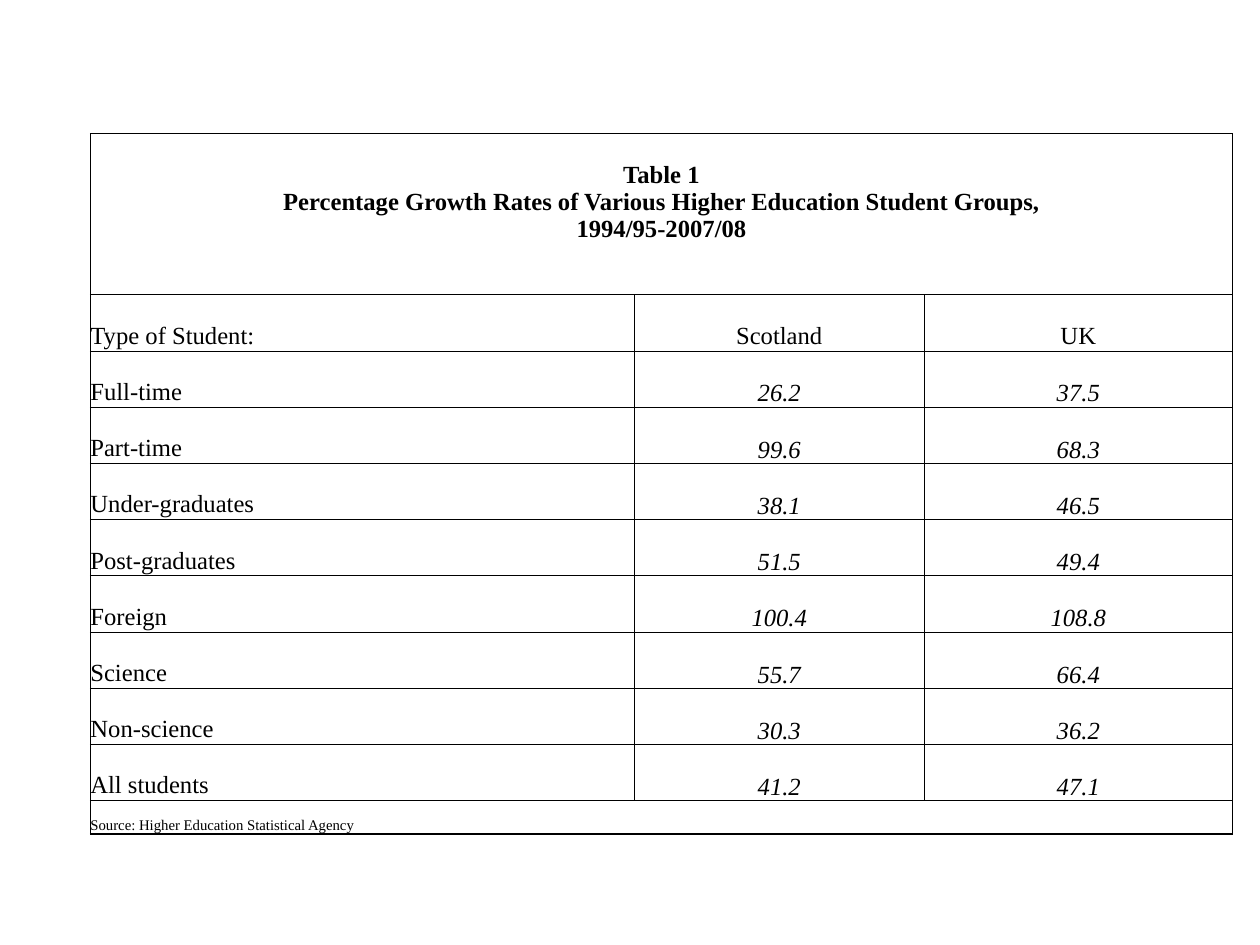
from dataclasses import dataclass

import pptx
import pptx.dml.color
import pptx.enum.text
import pptx.oxml
import pptx.oxml.ns
import pptx.table
import pptx.util

Inches = pptx.util.Inches
Align = pptx.enum.text.PP_ALIGN
Anchor = pptx.enum.text.MSO_ANCHOR
FONT = "Times New Roman"
INK = "000000"
COLUMN_WIDTHS = [6.14, 3.27, 3.48]
TITLE_HEIGHT, ROW_HEIGHT, SOURCE_HEIGHT = 1.82, 0.635, 0.34
LINE_GAP, SOURCE_GAP = 0.31, 0.19


@dataclass
class Growth:
    student_type: str
    scotland: str
    uk: str


HEADER = Growth("Type of Student:", "Scotland", "UK")
GROWTH_RATES = [
    Growth("Full-time", "26.2", "37.5"),
    Growth("Part-time", "99.6", "68.3"),
    Growth("Under-graduates", "38.1", "46.5"),
    Growth("Post-graduates", "51.5", "49.4"),
    Growth("Foreign", "100.4", "108.8"),
    Growth("Science", "55.7", "66.4"),
    Growth("Non-science", "30.3", "36.2"),
    Growth("All students", "41.2", "47.1"),
]
TITLE = [
    "Table 1",
    "Percentage Growth Rates of Various Higher Education Student Groups,",
    "1994/95-2007/08",
]


def color(value: str) -> pptx.dml.color.RGBColor:
    return pptx.dml.color.RGBColor.from_string(value)


def format_cell(cell: pptx.table._Cell) -> None:
    """Remove margins and fill, and rule all four sides."""
    cell.margin_left = cell.margin_right = cell.margin_top = cell.margin_bottom = 0
    tc_pr = cell._tc.get_or_add_tcPr()
    for side in ("lnL", "lnR", "lnT", "lnB"):
        tc_pr.append(pptx.oxml.parse_xml(
            f'<a:{side} {pptx.oxml.ns.nsdecls("a")} w="{pptx.util.Pt(1)}">'
            f'<a:solidFill><a:srgbClr val="{INK}"/></a:solidFill></a:{side}>'))
    cell.fill.background()


def write(cell: pptx.table._Cell, *lines: str, size: float = 20,
          bold: bool = False, italic: bool = False, align: Align = Align.LEFT,
          anchor: Anchor = Anchor.TOP, top: float = 0) -> None:
    cell.margin_top = Inches(top)
    cell.vertical_anchor = anchor
    tf = cell.text_frame
    for i, line in enumerate(lines):
        p = tf.add_paragraph() if i else tf.paragraphs[0]
        p.alignment = align
        r = p.add_run()
        r.text = line
        r.font.name, r.font.size = FONT, pptx.util.Pt(size)
        r.font.bold, r.font.italic = bold, italic
        r.font.color.rgb = color(INK)


def add_growth_table(s: pptx.slide.Slide) -> None:
    heights = [TITLE_HEIGHT] + [ROW_HEIGHT] * (len(GROWTH_RATES) + 1) + [SOURCE_HEIGHT]
    table = s.shapes.add_table(
        len(heights), len(COLUMN_WIDTHS), Inches(1.02), Inches(1.51),
        Inches(sum(COLUMN_WIDTHS)), Inches(sum(heights))).table
    table.first_row = table.horz_banding = False
    for column, width in zip(table.columns, COLUMN_WIDTHS):
        column.width = Inches(width)
    for row, height in zip(table.rows, heights):
        row.height = Inches(height)
    for cell in table.iter_cells():
        format_cell(cell)

    last_row, last_column = len(heights) - 1, len(COLUMN_WIDTHS) - 1
    for row in (0, last_row):
        table.cell(row, 0).merge(table.cell(row, last_column))
    write(table.cell(0, 0), *TITLE, bold=True, align=Align.CENTER, top=LINE_GAP)
    write(table.cell(last_row, 0), "Source: Higher Education Statistical Agency",
          size=12, top=SOURCE_GAP)

    for row, growth in enumerate([HEADER] + GROWTH_RATES, start=1):
        write(table.cell(row, 0), growth.student_type, top=LINE_GAP)
        for column, value in enumerate((growth.scotland, growth.uk), start=1):
            if growth is HEADER:
                write(table.cell(row, column), value, align=Align.CENTER, top=LINE_GAP)
            else:
                write(table.cell(row, column), value, italic=True,
                      align=Align.CENTER, anchor=Anchor.BOTTOM)


def main() -> None:
    prs = pptx.Presentation()
    prs.slide_width, prs.slide_height = Inches(14.22), Inches(10.67)
    s = prs.slides.add_slide(prs.slide_layouts[6])
    add_growth_table(s)
    prs.save("out.pptx")


if __name__ == "__main__":
    main()
